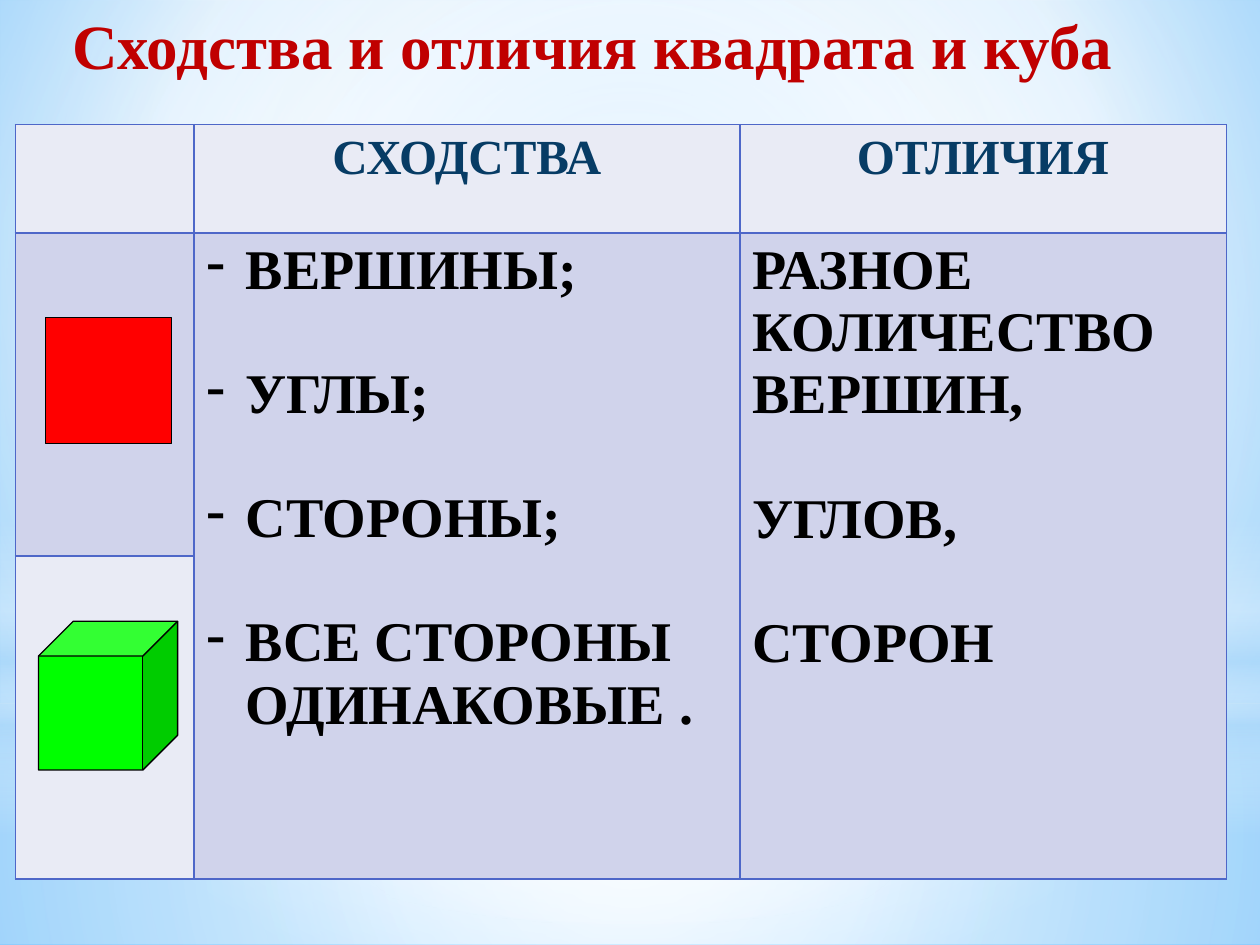
from lxml.etree import SubElement
from pptx import Presentation
from pptx.dml.color import RGBColor
from pptx.enum.shapes import MSO_SHAPE
from pptx.enum.text import MSO_ANCHOR, PP_ALIGN
from pptx.oxml.ns import qn
from pptx.util import Pt

THEME = {
    "font": "Times New Roman",
    "title": (36, "C00000"), "header": (28, "073C65"), "body": (32, "000000"),
    "border": "4E67C8", "light": "E9EBF5", "dark": "D0D3EB",
    "square": "FF0000", "cube": "00FF00", "outline": "000000",
    "white": "FFFFFF", "sky": "B4DCFA",
}
WHITE, SKY = THEME["white"], THEME["sky"]

TITLE = "Сходства и отличия квадрата и куба"
HEADERS = ["", "СХОДСТВА", "ОТЛИЧИЯ"]
# (text, whether a blank line's gap comes before it)
SIMILARITIES = [("ВЕРШИНЫ;", False), ("УГЛЫ;", True), ("СТОРОНЫ;", True),
                ("ВСЕ СТОРОНЫ ОДИНАКОВЫЕ .", True)]
DIFFERENCES = [("РАЗНОЕ", False), ("КОЛИЧЕСТВО ВЕРШИН,", False),
               ("УГЛОВ,", True), ("СТОРОН", True)]
FIGURES = [(MSO_SHAPE.RECTANGLE, (26, 181.5, 72, 72), THEME["square"]),
           (MSO_SHAPE.CUBE, (22, 355, 79.5, 85), THEME["cube"])]

# Gradient stops: position %, colour, opacity %
BACKDROP = [(0, "9ED5FF", 100), (60, WHITE, 100), (100, "5BB9FF", 100)]
CENTRE = (50, 50, 50, 50)
GLOWS = [
    (MSO_SHAPE.RECTANGLE, (0, 402, 720, 138),
     [(0, WHITE, 91), (37, WHITE, 76), (100, SKY, 79)], CENTRE),
    (MSO_SHAPE.RECTANGLE, (0, 0, 720, 402),
     [(0, WHITE, 89), (48, WHITE, 62), (100, SKY, 79)], CENTRE),
    (MSO_SHAPE.RECTANGLE, (0, 297, 720, 180),
     [(0, WHITE, 0), (29, WHITE, 30), (45, SKY, 40), (55, WHITE, 26),
      (65, SKY, 60), (100, WHITE, 0)], None),
    (MSO_SHAPE.OVAL, (0, 126, 720, 402),
     [(0, WHITE, 100), (56, WHITE, 0)], CENTRE),
]

TABLE_LEFT, TABLE_TOP = 8.75, 71.25
COLUMNS = [102, 312, 278]
ROWS = [62, 184.5, 184.5]
BLANK_LINE = 35.4
HANGING = 22.5


def color(code):
    return RGBColor.from_string(code)


def points(frame):
    return [Pt(value) for value in frame]


def paint_gradient(fill, owner, stops, focus):
    """Circular gradient around focus (left, top, right, bottom %), or vertical if None."""
    fill.gradient()
    gradient = owner.find(".//" + qn("a:gradFill"))
    for child in list(gradient):
        gradient.remove(child)
    stop_list = SubElement(gradient, qn("a:gsLst"))
    for position, code, opacity in stops:
        stop = SubElement(stop_list, qn("a:gs"), pos=str(position * 1000))
        tint = SubElement(stop, qn("a:srgbClr"), val=code)
        if opacity < 100:
            SubElement(tint, qn("a:alpha"), val=str(opacity * 1000))
    if focus is None:
        SubElement(gradient, qn("a:lin"), ang="5400000", scaled="0")
    else:
        route = SubElement(gradient, qn("a:path"), path="circle")
        sides = {side: str(value * 1000) for side, value in zip("ltrb", focus)}
        SubElement(route, qn("a:fillToRect"), **sides)


def add_span(para, text, style):
    span = para.add_run()
    span.text = text
    size, code = THEME[style]
    span.font.name = THEME["font"]
    span.font.size = Pt(size)
    span.font.bold = True
    span.font.color.rgb = color(code)


def add_shape(page, kind, frame):
    shape = page.shapes.add_shape(kind, *points(frame))
    shape.shadow.inherit = False
    return shape


def style_cell(cell, code):
    properties = cell._tc.get_or_add_tcPr()
    for side in ("lnL", "lnR", "lnT", "lnB"):
        line = SubElement(properties, qn("a:" + side), w=str(Pt(1)))
        paint = SubElement(line, qn("a:solidFill"))
        SubElement(paint, qn("a:srgbClr"), val=THEME["border"])
    cell.fill.solid()
    cell.fill.fore_color.rgb = color(code)


def write_list(cell, lines, dashed):
    for index, (text, gap) in enumerate(lines):
        frame = cell.text_frame
        para = frame.add_paragraph() if index else frame.paragraphs[0]
        if gap:
            para.space_before = Pt(BLANK_LINE)
        if dashed:
            properties = para._p.get_or_add_pPr()
            properties.set("marL", str(Pt(HANGING)))
            properties.set("indent", str(-Pt(HANGING)))
            SubElement(properties, qn("a:buChar"), char="-")
        add_span(para, text, "body")


def add_comparison(page):
    frame = (TABLE_LEFT, TABLE_TOP, sum(COLUMNS), sum(ROWS))
    table = page.shapes.add_table(len(ROWS), len(COLUMNS), *points(frame)).table
    table.first_row = table.horz_banding = False
    for column, width in zip(table.columns, COLUMNS):
        column.width = Pt(width)
    for row, height in zip(table.rows, ROWS):
        row.height = Pt(height)
    for r in range(len(ROWS)):
        for c in range(len(COLUMNS)):
            is_light = r == 0 or (r == 2 and c == 0)
            style_cell(table.cell(r, c), THEME["light" if is_light else "dark"])
    for c, text in enumerate(HEADERS):
        if text:
            para = table.cell(0, c).text_frame.paragraphs[0]
            para.alignment = PP_ALIGN.CENTER
            add_span(para, text, "header")
    for c, lines in ((1, SIMILARITIES), (2, DIFFERENCES)):
        table.cell(1, c).merge(table.cell(2, c))
        write_list(table.cell(1, c), lines, dashed=c == 1)


def add_title(page):
    box = page.shapes.add_textbox(*points((16.5, 0, 644, 90)))
    box.text_frame.word_wrap = True
    box.text_frame.vertical_anchor = MSO_ANCHOR.TOP
    para = box.text_frame.paragraphs[0]
    para.alignment = PP_ALIGN.CENTER
    add_span(para, TITLE, "title")


def main():
    deck = Presentation()
    deck.slide_width, deck.slide_height = Pt(720), Pt(540)
    page = deck.slides.add_slide(deck.slide_layouts[6])
    paint_gradient(page.background.fill, page._element, BACKDROP, (20, 10, 20, 60))
    for kind, frame, stops, focus in GLOWS:
        glow = add_shape(page, kind, frame)
        paint_gradient(glow.fill, glow._element, stops, focus)
        glow.line.fill.background()
    add_comparison(page)
    for kind, frame, code in FIGURES:
        figure = add_shape(page, kind, frame)
        figure.fill.solid()
        figure.fill.fore_color.rgb = color(code)
        figure.line.color.rgb = color(THEME["outline"])
        figure.line.width = Pt(0.75)
    add_title(page)
    deck.save("out.pptx")


if __name__ == "__main__":
    main()
